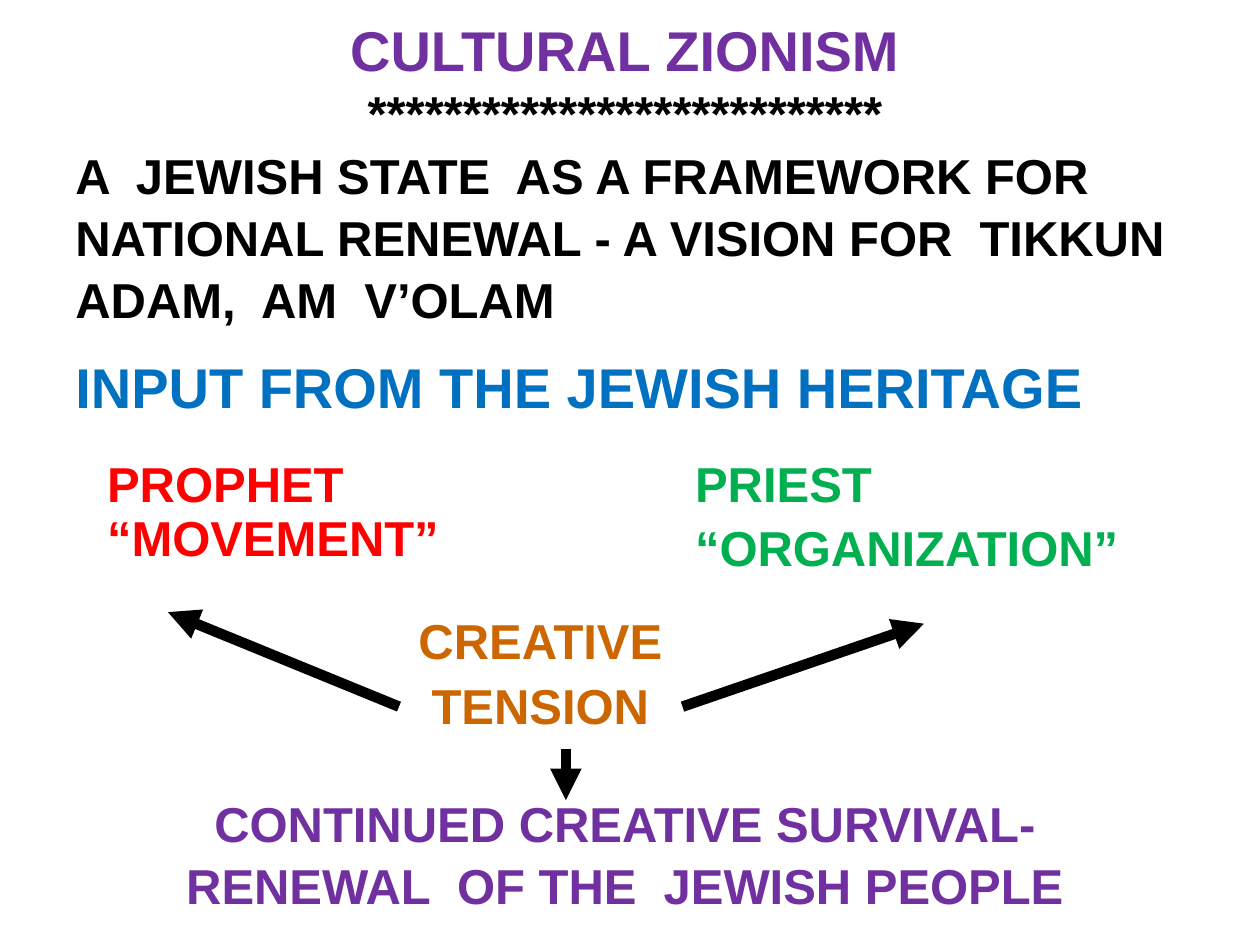
from lxml import etree
from pptx import Presentation
from pptx.dml.color import RGBColor
from pptx.enum.shapes import MSO_CONNECTOR
from pptx.enum.text import MSO_ANCHOR, PP_ALIGN
from pptx.oxml.ns import qn
from pptx.util import Inches, Pt

LEFT, CENTER = PP_ALIGN.LEFT, PP_ALIGN.CENTER
TOP, MIDDLE = MSO_ANCHOR.TOP, MSO_ANCHOR.MIDDLE
STRAIGHT = MSO_CONNECTOR.STRAIGHT

# Grid of 120 columns by 90 rows
WIDTH, HEIGHT = Inches(10), Inches(7.5)
COLUMN, ROW = WIDTH / 120, HEIGHT / 90
BLACK, PURPLE, BLUE = "000000", "7030A0", "0070C0"
RED, GREEN, ORANGE = "FF0000", "00B050", "CC6600"
HEADING, BODY = 32, 28


def color(value):
    return RGBColor.from_string(value)


def grid(box):
    left, top, width, height = box
    return [round(n) for n in (left * COLUMN, top * ROW, width * COLUMN, height * ROW)]


def add_run(para, text, size, hue):
    span = para.add_run()
    span.text = text
    span.font.name = "Arial"
    span.font.size = Pt(size)
    span.font.bold = True
    span.font.color.rgb = color(hue)


def fill_paras(frame, lines, hue, size=BODY, align=LEFT, before=0, spacing=1.0):
    for index, line in enumerate(lines):
        para = frame.add_paragraph() if index else frame.paragraphs[0]
        para.alignment = align
        para.space_before = Pt(before)
        para.line_spacing = spacing
        add_run(para, line, size, hue)


def add_frame(page, box, anchor=TOP):
    frame = page.shapes.add_textbox(*grid(box)).text_frame
    frame.word_wrap = True
    frame.vertical_anchor = anchor
    return frame


def add_title(page, box):
    para = add_frame(page, box, MIDDLE).paragraphs[0]
    para.alignment = CENTER
    add_run(para, "CULTURAL ZIONISM", HEADING, PURPLE)
    para.add_line_break()
    add_run(para, "*" * 27, BODY, BLACK)


def add_statement(page, box, text, hue, **style):
    fill_paras(add_frame(page, box), [text], hue, **style)


def add_roles(page, box, columns, rows):
    table = page.shapes.add_table(2, 2, *grid(box)).table
    table.first_row = table.horz_banding = False
    for column, share in zip(table.columns, columns):
        column.width = round(share * COLUMN)
    for row, share in zip(table.rows, rows):
        row.height = round(share * ROW)
    for cell in table.iter_cells():
        cell.fill.background()

    # The lower row is one cell, centred left of the table's middle
    tension = table.cell(1, 0)
    tension.merge(table.cell(1, 1))
    tension.margin_right = Inches(1.44)

    prophet, priest = table.cell(0, 0), table.cell(0, 1)
    fill_paras(prophet.text_frame, ["PROPHET “MOVEMENT”"], RED, before=5.6)
    fill_paras(priest.text_frame, ["PRIEST", "“ORGANIZATION”"], GREEN, before=5.6)
    fill_paras(tension.text_frame, ["CREATIVE", "TENSION"], ORANGE,
               align=CENTER, before=5.6)


def add_arrow(page, start, end):
    ends = grid((*start, *end))
    arrow = page.shapes.add_connector(STRAIGHT, *ends)
    arrow.line.color.rgb = color(BLACK)
    arrow.line.width = Pt(6)
    head = etree.SubElement(arrow.line._get_or_add_ln(), qn("a:tailEnd"))
    head.set("type", "triangle")
    etree.SubElement(arrow._element.spPr, qn("a:effectLst"))


def build_slide(deck):
    page = deck.slides.add_slide(deck.slide_layouts[6])

    # Title and definition
    add_title(page, (5.5, 1, 108, 13))
    add_statement(page, (6, 13, 109, 18),
                  "A  JEWISH STATE  AS A FRAMEWORK FOR NATIONAL RENEWAL"
                  " - A VISION FOR  TIKKUN  ADAM,  AM  V’OLAM",
                  BLACK, before=5.6, spacing=1.05)

    # Heritage heading and the two roles
    add_statement(page, (6, 33, 107, 7.7), "INPUT FROM THE JEWISH HERITAGE",
                  BLUE, size=HEADING)
    add_roles(page, (9, 43, 101, 29.2), (56, 45), (15, 14.2))

    # Outcome
    add_statement(page, (7.5, 74.75, 104, 12.5),
                  "CONTINUED CREATIVE SURVIVAL- RENEWAL  OF THE  JEWISH PEOPLE",
                  PURPLE, align=CENTER, before=14, spacing=1.05)

    # Arrows out of the tension
    add_arrow(page, (38, 67.3), (16, 58.3))
    add_arrow(page, (65, 67.3), (88, 59.4))
    add_arrow(page, (53.9, 71.3), (53.9, 76.2))


def main():
    deck = Presentation()
    deck.slide_width, deck.slide_height = WIDTH, HEIGHT
    build_slide(deck)
    deck.save("out.pptx")


if __name__ == "__main__":
    main()
